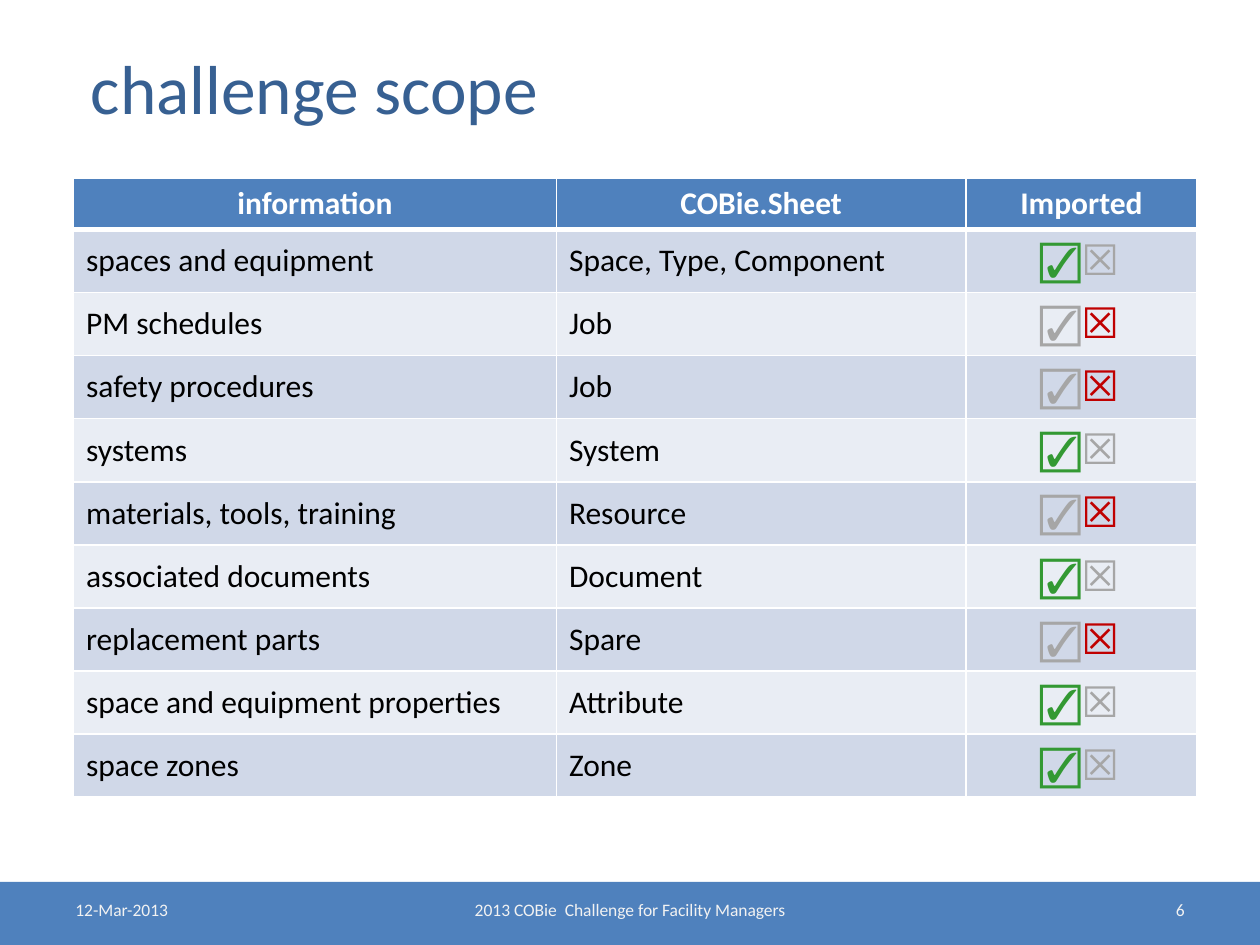
from lxml import etree
from pptx import Presentation
from pptx.dml.color import RGBColor
from pptx.enum.shapes import MSO_SHAPE as Shape
from pptx.enum.text import MSO_ANCHOR as Anchor, PP_ALIGN as Align
from pptx.oxml.ns import qn
from pptx.util import Pt

COLORS = {
    "title": "376092",
    "blue": "4F81BD",
    "band_dark": "D0D8E8",
    "band_light": "E9EDF4",
    "white": "FFFFFF",
    "black": "000000",
    "green": "339933",
    "red": "C00000",
    "gray": "A6A6A6",
    "footer": "F2F2F2",
}
HEADINGS = ["information", "COBie.Sheet", "Imported"]
SCOPE = [
    ("spaces and equipment", "Space, Type, Component", True),
    ("PM schedules", "Job", False),
    ("safety procedures", "Job", False),
    ("systems", "System", True),
    ("materials, tools, training", "Resource", False),
    ("associated documents", "Document", True),
    ("replacement parts", "Spare", False),
    ("space and equipment properties", "Attribute", True),
    ("space zones", "Zone", True),
]
COLUMN_WIDTHS = [276, 234, 132]


def rgb(name):
    return RGBColor.from_string(COLORS[name])


def add_span(para, text, size, color, bold=False):
    span = para.add_run()
    span.text = text
    span.font.name = "Calibri"
    span.font.size = Pt(size)
    span.font.bold = bold
    span.font.color.rgb = rgb(color)


def add_text(page, box, text, size, color, align=Align.LEFT, anchor=Anchor.TOP):
    frame = page.shapes.add_textbox(*map(Pt, box)).text_frame
    frame.word_wrap = True
    frame.vertical_anchor = anchor
    para = frame.paragraphs[0]
    para.alignment = align
    add_span(para, text, size, color)


def add_borders(cell, top=1, bottom=1):
    properties = cell._tc.get_or_add_tcPr()
    widths = {"a:lnL": 1, "a:lnR": 1, "a:lnT": top, "a:lnB": bottom}
    for index, (tag, width) in enumerate(widths.items()):
        line = etree.Element(qn(tag), w=str(Pt(width)))
        fill = etree.SubElement(line, qn("a:solidFill"))
        etree.SubElement(fill, qn("a:srgbClr"), val=COLORS["white"])
        properties.insert(index, line)


def fill_cell(cell, color):
    cell.fill.solid()
    cell.fill.fore_color.rgb = rgb(color)
    return cell.text_frame.paragraphs[0]


def add_title(page, box):
    add_text(page, box, " challenge scope", 39.6, "title", anchor=Anchor.MIDDLE)


def add_scope_table(page, box):
    table = page.shapes.add_table(
        len(SCOPE) + 1, len(HEADINGS), *map(Pt, box)
    ).table
    for column, width in zip(table.columns, COLUMN_WIDTHS):
        column.width = Pt(width)
    for row in table.rows:
        row.height = Pt(box[3] / len(table.rows))

    for column, heading in enumerate(HEADINGS):
        cell = table.cell(0, column)
        para = fill_cell(cell, "blue")
        para.alignment = Align.CENTER
        add_span(para, heading, 18, "white", True)
        add_borders(cell, bottom=3)

    for row, (*labels, imported) in enumerate(SCOPE, 1):
        band = "band_dark" if row % 2 else "band_light"
        for column in range(len(HEADINGS)):
            cell = table.cell(row, column)
            cell.vertical_anchor = Anchor.MIDDLE
            para = fill_cell(cell, band)
            if column < len(labels):
                add_span(para, labels[column], 18, "black")
            else:
                para.alignment = Align.CENTER
                add_span(para, "☑", 24, "green" if imported else "gray", True)
                add_span(para, "☒", 24, "gray" if imported else "red", True)
            add_borders(cell, top=3 if row == 1 else 1)


def add_footer(page, box):
    left, top, width, height = box
    bar = page.shapes.add_shape(Shape.RECTANGLE, *map(Pt, box))
    bar.shadow.inherit = False
    bar.fill.solid()
    bar.fill.fore_color.rgb = rgb("blue")
    bar.line.fill.background()

    margin, side, middle = 36, 168, 228
    parts = [
        (margin, side, "12-Mar-2013", Align.LEFT),
        ((width - middle) / 2, middle,
         "2013 COBie  Challenge for Facility Managers", Align.CENTER),
        (width - margin - side, side, "6", Align.RIGHT),
    ]
    for offset, part_width, text, align in parts:
        part_box = (left + offset, top + 6, part_width, 19.5)
        add_text(page, part_box, text, 10, "footer", align)


def main():
    deck = Presentation()
    deck.slide_width, deck.slide_height = Pt(720), Pt(540)
    page = deck.slides.add_slide(deck.slide_layouts[6])
    add_title(page, (36, 21.6, 648, 56))
    add_scope_table(page, (42, 102, sum(COLUMN_WIDTHS), 292))
    add_footer(page, (0, 504, 720, 36))
    deck.save("out.pptx")


if __name__ == "__main__":
    main()
